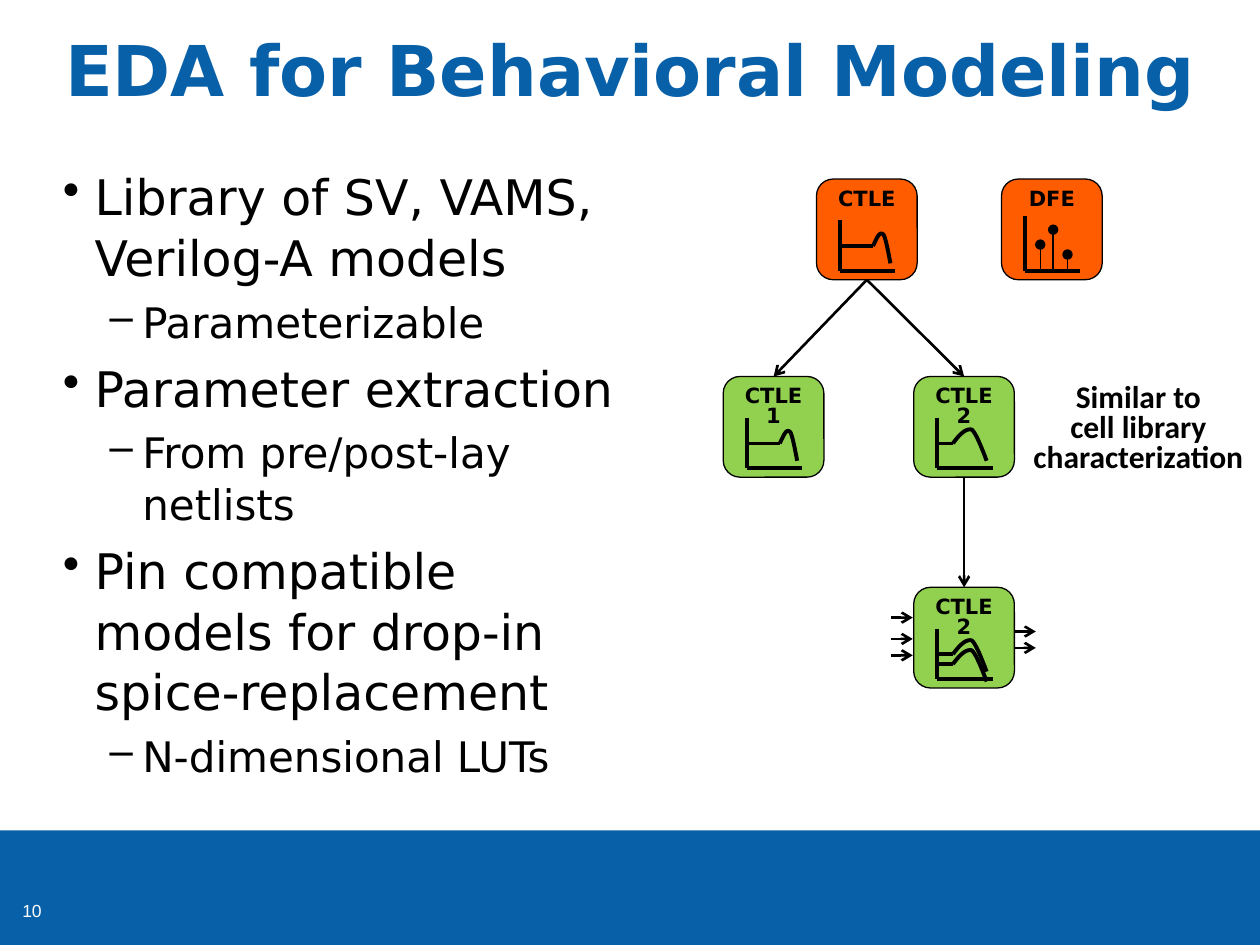
from copy import deepcopy
from dataclasses import dataclass
from typing import Any

from lxml import etree
from pptx import Presentation
from pptx.dml.color import RGBColor
from pptx.enum.shapes import MSO_CONNECTOR, MSO_SHAPE
from pptx.enum.text import MSO_ANCHOR, PP_ALIGN
from pptx.oxml.ns import qn
from pptx.util import Cm, Pt

LINE = MSO_CONNECTOR.STRAIGHT
RECT, ROUND = MSO_SHAPE.RECTANGLE, MSO_SHAPE.ROUNDED_RECTANGLE
TOP, BOTTOM = MSO_ANCHOR.TOP, MSO_ANCHOR.BOTTOM
LEFT, CENTER, RIGHT = PP_ALIGN.LEFT, PP_ALIGN.CENTER, PP_ALIGN.RIGHT

COLORS = {"blue": "0860A8", "orange": "FF5C00", "green": "92D050",
          "black": "000000", "white": "FFFFFF"}
SANS = "DejaVu Sans"
SIDE = 2.03
AXIS_X, AXIS_END, AXIS_TOP, AXIS_BASE = 0.47, 1.59, 0.83, 1.85
LEVEL = 1.35
NO_INSETS = dict.fromkeys(
    ("margin_left", "margin_top", "margin_right", "margin_bottom"), 0)
TIGHT = {"alignment": CENTER, "line_spacing": 0.8}

Point = tuple[float, float]
NARROW: list[Point] = [(1.14, 1.35), (1.22, 1.19), (1.27, 1.04), (1.35, 1.12),
                       (1.4, 1.17), (1.49, 1.7), (1.49, 1.7)]
WIDE: list[Point] = [(0.79, 1.35), (0.91, 1.19), (1.04, 1.04), (1.17, 1.07),
                     (1.27, 1.14), (1.47, 1.7), (1.47, 1.7)]
STEMS: list[Point] = [(1.04, 1.02), (0.78, 1.32), (1.33, 1.52)]


@dataclass
class Block:
    label: str
    x: float
    y: float
    color: str
    curve: list[Point] | None = None
    shifts: tuple[float, ...] = (0,)
    inputs: tuple[float, ...] = ()
    outputs: tuple[float, ...] = ()

    @property
    def mid(self) -> float:
        return self.x + SIDE / 2


@dataclass
class Bullet:
    text: str
    level: int = 0


@dataclass
class BulletStyle:
    char: str
    size: int
    left: float
    hang: float


CTLE = Block("CTLE", 16.46, 3.61, "orange", NARROW)
DFE = Block("DFE", 20.19, 3.61, "orange")
CTLE_1 = Block("CTLE\n1", 14.58, 7.59, "green", NARROW)
CTLE_2 = Block("CTLE\n2", 18.42, 7.59, "green", WIDE)
CTLE_PINS = Block("CTLE\n2", 18.42, 11.84, "green", WIDE, (0, 0.2),
                  (0.61, 1.04, 1.37), (0.89, 1.22))
BLOCKS = [CTLE, DFE, CTLE_1, CTLE_2, CTLE_PINS]
FLOWS = [(CTLE, CTLE_1), (CTLE, CTLE_2), (CTLE_2, CTLE_PINS)]
STYLES = [BulletStyle("•", 28, 0.64, 0.64), BulletStyle("–", 24, 1.6, 0.66)]
BULLETS = [
    Bullet("Library of SV, VAMS, Verilog-A models"),
    Bullet("Parameterizable", 1),
    Bullet("Parameter extraction"),
    Bullet("From pre/post-lay netlists", 1),
    Bullet("Pin compatible models for drop-in spice-replacement"),
    Bullet("N-dimensional LUTs", 1),
]


def rgb(name: str) -> RGBColor:
    return RGBColor.from_string(COLORS[name])


def apply(obj: Any, fmt: dict[str, Any]) -> None:
    for key, value in fmt.items():
        setattr(obj, key, value)


def write(p: Any, text: str, para: dict[str, Any], size: float,
          color: str = "black", font: str = SANS, bold: bool = False) -> None:
    p.text = text
    apply(p, para)
    for r in p.runs:
        apply(r.font, {"size": Pt(size), "name": font, "bold": bold})
        r.font.color.rgb = rgb(color)
    for br in p._p.findall(qn("a:br")):
        br.insert(0, deepcopy(p.runs[0]._r.rPr))


def text_box(shapes: Any, x: float, y: float, w: float, h: float,
             frame: dict[str, Any]) -> Any:
    tf = shapes.add_textbox(Cm(x), Cm(y), Cm(w), Cm(h)).text_frame
    apply(tf, {"word_wrap": True, "vertical_anchor": TOP, **frame})
    return tf


def add_line(shapes: Any, x1: float, y1: float, x2: float, y2: float,
             width: float = 2.25, head: str = "", tail: str = "") -> None:
    s = shapes.add_connector(LINE, Cm(x1), Cm(y1), Cm(x2), Cm(y2))
    s.line.color.rgb, s.line.width = rgb("black"), Pt(width)
    ln = s.line._get_or_add_ln()
    for tag, kind in (("a:headEnd", head), ("a:tailEnd", tail)):
        if kind:
            etree.SubElement(ln, qn(tag), type=kind)
    etree.SubElement(s._element.spPr, qn("a:effectLst"))


def bezier(ctrl: list[Point], steps: int = 12) -> list[Point]:
    points = ctrl[:1]
    for i in range(0, len(ctrl) - 1, 3):
        for t in (n / steps for n in range(1, steps + 1)):
            weights = ((1 - t) ** 3, 3 * t * (1 - t) ** 2, 3 * t * t * (1 - t), t ** 3)
            x, y = (sum(w * c[k] for w, c in zip(weights, ctrl[i:i + 4]))
                    for k in (0, 1))
            points.append((x, y))
    return points


def add_curve(shapes: Any, ctrl: list[Point], x: float, y: float) -> None:
    start, *rest = [(Cm(x + dx), Cm(y + dy)) for dx, dy in bezier(ctrl)]
    builder = shapes.build_freeform(*start, scale=1.0)
    builder.add_line_segments(rest, close=False)
    sp = builder.convert_to_shape()
    sp.shadow.inherit = False
    sp.fill.background()
    sp.line.color.rgb, sp.line.width = rgb("black"), Pt(2.25)


def add_block(slide: Any, b: Block) -> None:
    shapes = slide.shapes.add_group_shape().shapes
    sp = shapes.add_shape(ROUND, Cm(b.x), Cm(b.y), Cm(SIDE), Cm(SIDE))
    sp.shadow.inherit = False
    sp.fill.solid()
    sp.fill.fore_color.rgb = rgb(b.color)
    sp.line.color.rgb, sp.line.width = rgb("black"), Pt(0.75)
    sp.text_frame.vertical_anchor = TOP
    write(sp.text_frame.paragraphs[0], b.label, TIGHT, 12, bold=True)
    left, base = b.x + AXIS_X, b.y + AXIS_BASE
    add_line(shapes, left, b.y + AXIS_TOP - (0 if b.curve else 0.08), left, base)
    add_line(shapes, left, base, b.x + AXIS_END, base)
    if b.curve:
        for dy in b.shifts:
            level = b.y + LEVEL + dy
            add_line(shapes, left, level, b.x + b.curve[0][0], level)
            add_curve(shapes, b.curve, b.x, b.y + dy)
    else:
        for dx, dy in STEMS:
            add_line(shapes, b.x + dx, b.y + dy, b.x + dx, base, 0.75, head="oval")
    for pins, x in ((b.inputs, b.x - 0.45), (b.outputs, b.x + SIDE)):
        for dy in pins:
            add_line(shapes, x, b.y + dy, x + 0.43, b.y + dy, 1.5, tail="arrow")


def add_bullets(tf: Any, bullets: list[Bullet]) -> None:
    for i, b in enumerate(bullets):
        p = tf.add_paragraph() if i else tf.paragraphs[0]
        style = STYLES[b.level]
        write(p, b.text, {"level": b.level, "alignment": LEFT, "line_spacing": 1.03,
                          "space_before": Pt(style.size * 0.2)}, style.size)
        pPr = p._p.get_or_add_pPr()
        pPr.set("marL", str(Cm(style.left)))
        pPr.set("indent", str(Cm(-style.hang)))
        etree.SubElement(pPr, qn("a:buChar"), char=style.char)


def main() -> None:
    """Build the behavioral modeling slide."""
    prs = Presentation()
    prs.slide_width, prs.slide_height = Cm(25.4), Cm(19.05)
    slide = prs.slides.add_slide(prs.slide_layouts[6])
    shapes = slide.shapes
    band = shapes.add_shape(RECT, 0, Cm(16.74), Cm(25.4), Cm(2.31))
    band.shadow.inherit = False
    band.fill.solid()
    band.fill.fore_color.rgb = rgb("blue")
    band.line.fill.background()
    tf = text_box(shapes, 0, 17.42, 1.09, 1.27, {"vertical_anchor": BOTTOM})
    write(tf.paragraphs[0], "10", {"alignment": RIGHT}, 10, "white", "Arial")
    tf = text_box(shapes, 1.27, 0.53, 22.86, 2.46, NO_INSETS)
    write(tf.paragraphs[0], "EDA for Behavioral Modeling", {"alignment": CENTER},
          40, "blue", bold=True)
    add_bullets(text_box(shapes, 1.27, 3.33, 11.23, 13.44, NO_INSETS), BULLETS)
    for b in BLOCKS:
        add_block(slide, b)
    for src, dst in FLOWS:
        add_line(shapes, src.mid, src.y + SIDE, dst.mid, dst.y, 1.5, tail="arrow")
    tf = text_box(shapes, 20.45, 7.62, 5, 2.11, {})
    write(tf.paragraphs[0], "Similar to\ncell library characterization", TIGHT, 18,
          font="Calibri", bold=True)
    prs.save("out.pptx")


if __name__ == "__main__":
    main()
